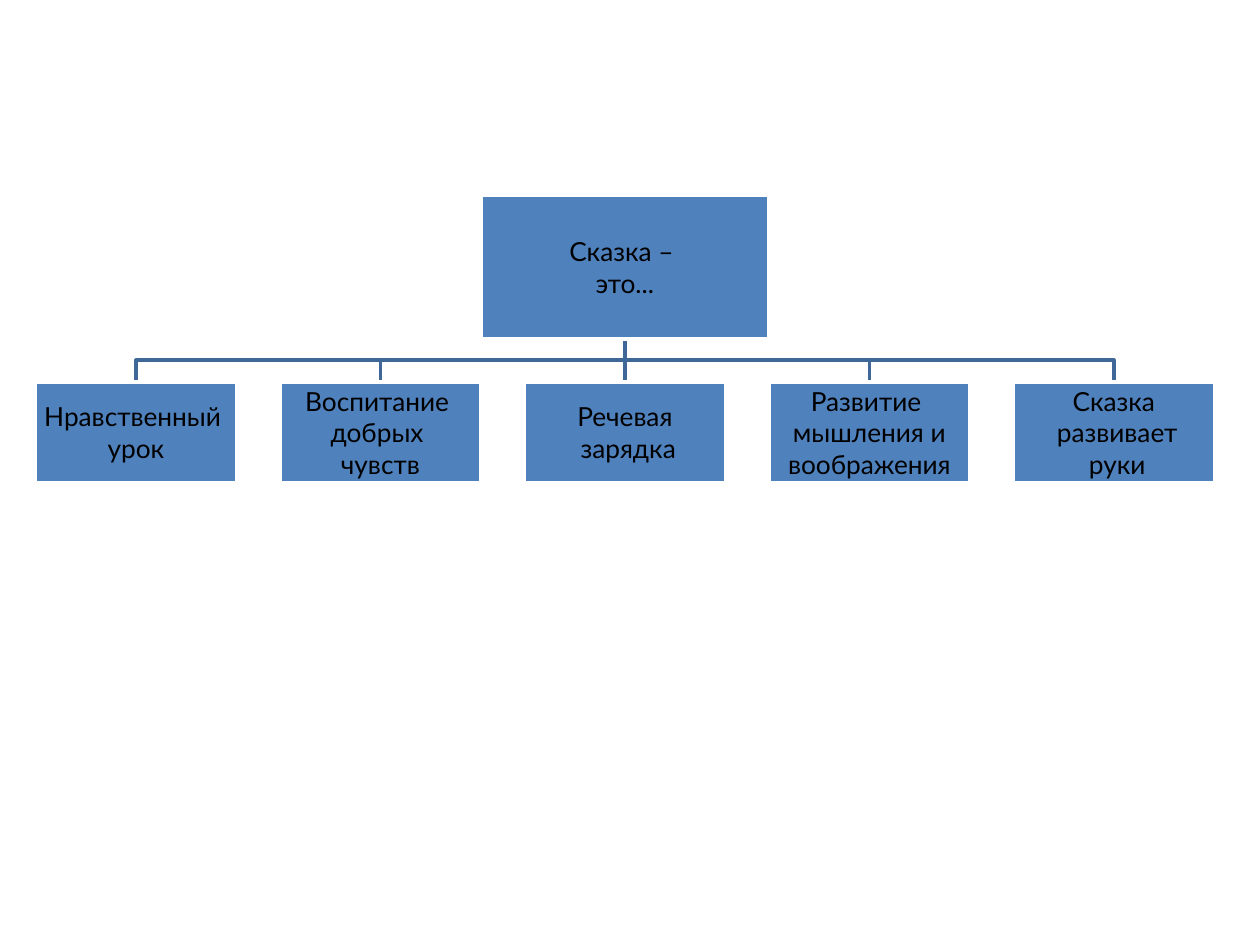
from pptx import Presentation
from pptx.dml.color import RGBColor
from pptx.enum.shapes import MSO_CONNECTOR as CONN, MSO_SHAPE as SHAPE
from pptx.enum.text import MSO_ANCHOR as ANCHOR, PP_ALIGN as ALIGN
from pptx.oxml.ns import qn
from pptx.util import Pt
from lxml.etree import SubElement


def color(hex_value):
    return RGBColor.from_string(hex_value)


class Chart:
    """Draws boxes and branches of a hierarchy on one slide."""
    fill, border, branch_color = "4F81BD", "FFFFFF", "3F6797"
    line_width = 2
    font = {"name": "Lato", "size": Pt(15)}
    frame = {"word_wrap": True, "vertical_anchor": ANCHOR.MIDDLE,
             "margin_left": Pt(0.7), "margin_right": Pt(0.7),
             "margin_top": Pt(0.7), "margin_bottom": Pt(0.7)}

    def __init__(self, slide):
        self.shapes = slide.shapes

    def outline(self, sp, hex_value):
        sp.line.color.rgb = color(hex_value)
        sp.line.width = Pt(self.line_width)

    def box(self, x, y, w, h, lines):
        sp = self.shapes.add_shape(SHAPE.RECTANGLE, Pt(x), Pt(y), Pt(w), Pt(h))
        sp.shadow.inherit = False
        sp.fill.solid()
        sp.fill.fore_color.rgb = color(self.fill)
        self.outline(sp, self.border)
        tf = sp.text_frame
        for key, value in self.frame.items():
            setattr(tf, key, value)
        for i, line in enumerate(lines):
            p = tf.paragraphs[0] if i == 0 else tf.add_paragraph()
            p.alignment = ALIGN.CENTER
            r = p.add_run()
            r.text = line
            for key, value in self.font.items():
                setattr(r.font, key, value)
            r.font.color.rgb = color("000000")

    def branch(self, x1, y1, x2, y2):
        """Elbow that goes down, across and down; straight if x is equal."""
        if x1 == x2:
            sp = self.shapes.add_connector(CONN.STRAIGHT, Pt(x1), Pt(y1), Pt(x2), Pt(y2))
            SubElement(sp._element.spPr, qn("a:effectLst"))
        else:
            mid = (y1 + y2) / 2
            fb = self.shapes.build_freeform(Pt(x1), Pt(y1))
            points = [(x1, mid), (x2, mid), (x2, y2)]
            fb.add_line_segments([(Pt(x), Pt(y)) for x, y in points], close=False)
            sp = fb.convert_to_shape()
            sp.shadow.inherit = False
            sp.fill.background()
        self.outline(sp, self.branch_color)


ROOT = ["Сказка – ", "это..."]
CHILDREN = [
    ["Нравственный ", "урок"],
    ["Воспитание ", "добрых ", "чувств"],
    ["Речевая", " зарядка"],
    ["Развитие ", "мышления и", "воображения"],
    ["Сказка", " развивает", " руки"],
]
CENTER, STEP = 357.1, 139.7
ROOT_Y, ROOT_W, ROOT_H = 111.6, 164, 82
CHILD_Y, CHILD_W, CHILD_H = 218.2, 115, 57.5


def main():
    prs = Presentation()
    prs.slide_width, prs.slide_height = Pt(720), Pt(540)
    s = Chart(prs.slides.add_slide(prs.slide_layouts[6]))

    # Branches, behind the boxes
    middle = len(CHILDREN) // 2
    centers = [CENTER + (i - middle) * STEP for i in range(len(CHILDREN))]
    for x in reversed(centers):
        s.branch(CENTER, ROOT_Y + ROOT_H, x, CHILD_Y)

    # Root and its children
    s.box(CENTER - ROOT_W / 2, ROOT_Y, ROOT_W, ROOT_H, ROOT)
    for x, lines in zip(centers, CHILDREN):
        s.box(x - CHILD_W / 2, CHILD_Y, CHILD_W, CHILD_H, lines)

    prs.save("out.pptx")


if __name__ == "__main__":
    main()
